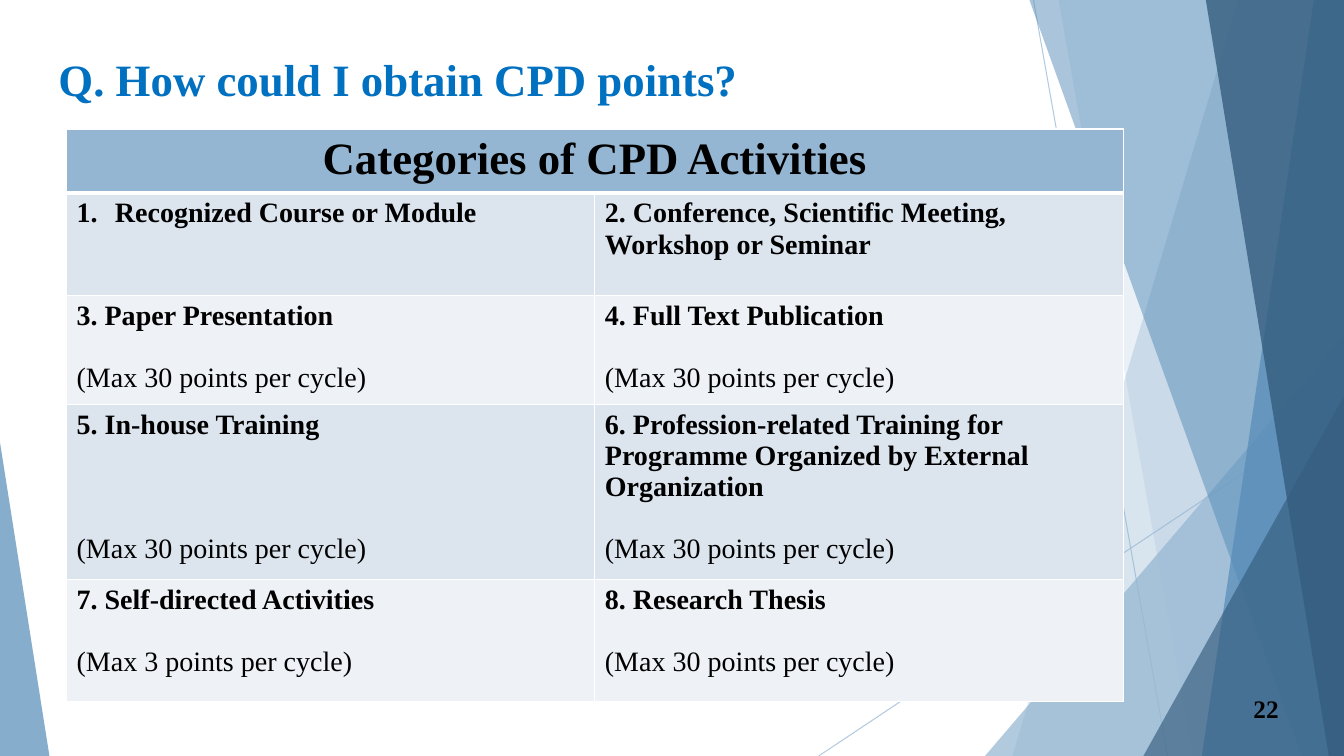
from lxml import etree
from pptx import Presentation
from pptx.dml.color import RGBColor
from pptx.enum.shapes import MSO_CONNECTOR, MSO_SHAPE
from pptx.enum.text import MSO_ANCHOR, PP_ALIGN
from pptx.oxml.ns import qn
from pptx.util import Inches, Pt

STRAIGHT = MSO_CONNECTOR.STRAIGHT
TRIANGLE = MSO_SHAPE.ISOSCELES_TRIANGLE
TOP, MIDDLE = MSO_ANCHOR.TOP, MSO_ANCHOR.MIDDLE
LEFT, CENTER, RIGHT = PP_ALIGN.LEFT, PP_ALIGN.CENTER, PP_ALIGN.RIGHT

FONT = "Times New Roman"
LIGHT, MID, DARK = "94B6D2", "558BB8", "355D7E"
BLACK, WHITE, TITLE_BLUE = "000000", "FFFFFF", "0070C0"
ROW_FILLS = ["DCE4EE", "EEF1F6"]
ROW_HEIGHTS = [0.62, 1.02, 1.02, 1.64, 1.21]
LINE_GAP = 22.2
MAX_30 = "(Max 30 points per cycle)"
MAX_3 = "(Max 3 points per cycle)"

RAYS = [((10.25, 0), (11.58, 7.5)), ((13.33, 4.03), (8.12, 7.5))]
BACK_BANDS = [(12.28, 10.04, LIGHT, 36), (10.5, 11.83, LIGHT, 20)]
FRONT_BANDS = [
    (10.21, 12.91, MID, 50),
    (13.03, 11.92, MID, 70),
    (11.96, 13.18, DARK, 80),
]

ACTIVITIES = [
    [("Recognized Course or Module", None, 0),
     ("2. Conference, Scientific Meeting, Workshop or Seminar", None, 0)],
    [("3. Paper Presentation", MAX_30, 1),
     ("4. Full Text Publication", MAX_30, 1)],
    [("5. In-house Training", MAX_30, 3),
     ("6. Profession-related Training for Programme Organized by External Organization",
      MAX_30, 1)],
    [("7. Self-directed Activities", MAX_3, 1),
     ("8. Research Thesis", MAX_30, 1)],
]


def color(hex_text):
    return RGBColor.from_string(hex_text)


class SlideBuilder:
    def __init__(self, deck):
        self.page = deck.slides.add_slide(deck.slide_layouts[5])
        self.shapes = self.page.shapes

    def set_alpha(self, shape, percent):
        for tint in shape.element.spPr.iter(qn("a:srgbClr")):
            etree.SubElement(tint, qn("a:alpha"), val=str(percent * 1000))

    def paint(self, shape, fill, alpha):
        shape.shadow.inherit = False
        shape.fill.solid()
        shape.fill.fore_color.rgb = color(fill)
        shape.line.fill.background()
        self.set_alpha(shape, alpha)

    def ray(self, start, end):
        line = self.shapes.add_connector(STRAIGHT, *map(Inches, start + end))
        line.line.color.rgb = color(LIGHT)
        line.line.width = Pt(0.75)
        self.set_alpha(line, 70)
        etree.SubElement(line.element.spPr, qn("a:effectLst"))

    def band(self, top_x, bottom_x, fill, alpha):
        corners = [(13.33, 0), (13.33, 7.5), (bottom_x, 7.5)]
        outline = self.shapes.build_freeform(Inches(top_x), 0)
        outline.add_line_segments([(Inches(x), Inches(y)) for x, y in corners])
        self.paint(outline.convert_to_shape(), fill, alpha)

    def triangle(self, left, top, width, height, apex, fill, alpha):
        shape = self.shapes.add_shape(TRIANGLE, *map(Inches, (left, top, width, height)))
        shape.adjustments[0] = apex
        self.paint(shape, fill, alpha)

    def add_text(self, para, text, size, bold=True, fill=BLACK, align=LEFT):
        para.alignment = align
        span = para.add_run()
        span.text = text
        span.font.name = FONT
        span.font.size = Pt(size)
        span.font.bold = bold
        span.font.color.rgb = color(fill)

    def title(self, text):
        box = self.shapes.title
        box.left, box.top, box.width, box.height = map(Inches, (0.48, 0.46, 12.78, 1.44))
        box.text_frame.vertical_anchor = TOP
        box.text_frame.word_wrap = True
        self.add_text(box.text_frame.paragraphs[0], text, 32, fill=TITLE_BLUE)
        self.shapes.element.append(box.element)

    def page_number(self, text):
        box = self.shapes.add_textbox(*map(Inches, (12.03, 6.83, 0.75, 0.4)))
        box.text_frame.word_wrap = True
        box.text_frame.vertical_anchor = MIDDLE
        self.add_text(box.text_frame.paragraphs[0], text, 18, align=RIGHT)

    def style_cell(self, cell, fill, top=1, bottom=1):
        props = cell._tc.get_or_add_tcPr()
        for side, width in (("L", 1), ("R", 1), ("T", top), ("B", bottom)):
            border = etree.SubElement(props, qn("a:ln" + side), w=str(Pt(width)))
            paint = etree.SubElement(border, qn("a:solidFill"))
            etree.SubElement(paint, qn("a:srgbClr"), val=WHITE)
        cell.fill.solid()
        cell.fill.fore_color.rgb = color(fill)

    def number(self, para):
        props = para._p.get_or_add_pPr()
        props.set("marL", str(Inches(0.38)))
        props.set("indent", str(Inches(-0.38)))
        etree.SubElement(props, qn("a:buFont"), typeface="+mj-lt")
        etree.SubElement(props, qn("a:buAutoNum"), type="arabicPeriod")

    def activity_table(self, heading, activities):
        frame = self.shapes.add_table(
            len(ROW_HEIGHTS), 2, Inches(0.66), Inches(1.28),
            Inches(10.48), Inches(sum(ROW_HEIGHTS)))
        table = frame.table
        table.first_row = table.horz_banding = False
        for row, height in zip(table.rows, ROW_HEIGHTS):
            row.height = Inches(height)
        for column in range(2):
            self.style_cell(table.cell(0, column), LIGHT, bottom=3)
        table.cell(0, 0).merge(table.cell(0, 1))
        self.add_text(table.cell(0, 0).text_frame.paragraphs[0], heading, 32, align=CENTER)
        for r, pair in enumerate(activities, 1):
            for c, (name, limit, gap_lines) in enumerate(pair):
                cell = table.cell(r, c)
                self.style_cell(cell, ROW_FILLS[(r - 1) % 2], top=3 if r == 1 else 1)
                para = cell.text_frame.paragraphs[0]
                if r == 1 and c == 0:
                    self.number(para)
                self.add_text(para, name, 20)
                if limit:
                    para = cell.text_frame.add_paragraph()
                    para.space_before = Pt(gap_lines * LINE_GAP)
                    self.add_text(para, limit, 20, bold=False)


def main():
    deck = Presentation()
    deck.slide_width, deck.slide_height = Inches(13.33), Inches(7.5)
    slide = SlideBuilder(deck)
    for start, end in RAYS:
        slide.ray(start, end)
    for band in BACK_BANDS:
        slide.band(*band)
    slide.triangle(9.77, 3.33, 3.56, 4.17, 1, LIGHT, 72)
    for band in FRONT_BANDS:
        slide.band(*band)
    slide.triangle(11.34, 3.93, 1.99, 3.57, 1, DARK, 66)
    slide.triangle(0, 4.39, 0.49, 3.11, 0, MID, 70)
    slide.title("Q. How could I obtain CPD points?")
    slide.page_number("22")
    slide.activity_table("Categories of CPD Activities", ACTIVITIES)
    deck.save("out.pptx")


if __name__ == "__main__":
    main()
